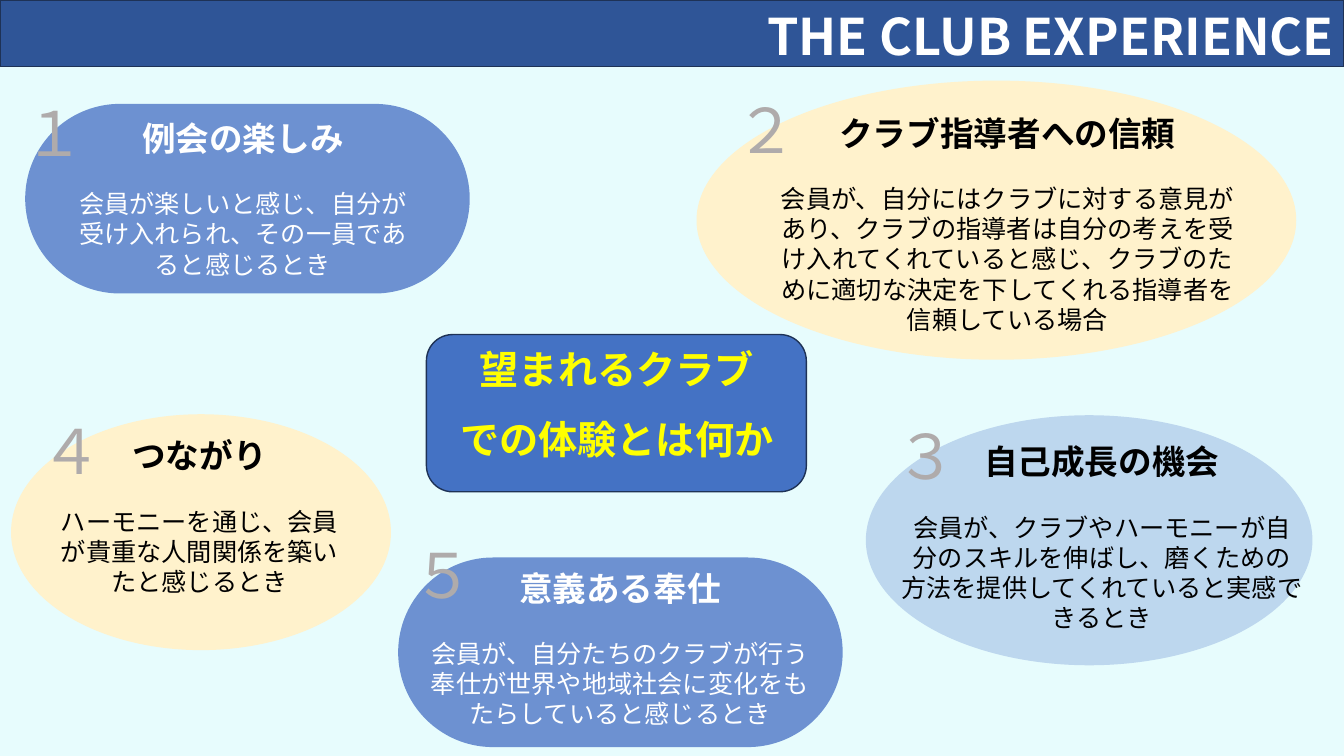
from dataclasses import dataclass

from pptx import Presentation
from pptx.dml.color import RGBColor
from pptx.enum import shapes, text
from pptx.oxml import ns
from pptx.util import Pt

FONT = "Noto Sans CJK JP"
WHITE = RGBColor(0xFF, 0xFF, 0xFF)
BLACK = RGBColor(0x00, 0x00, 0x00)
YELLOW = RGBColor(0xFF, 0xFF, 0x00)
GREY = RGBColor(0xAF, 0xAB, 0xAB)
PALE = RGBColor(0xE7, 0xFC, 0xFD)
NAVY = RGBColor(0x2F, 0x55, 0x97)
EDGE = RGBColor(0x1E, 0x32, 0x56)
BLUE = RGBColor(0x44, 0x72, 0xC4)
SOFT_BLUE = RGBColor(0x6D, 0x91, 0xD1)
LIGHT_BLUE = RGBColor(0xBD, 0xD7, 0xEE)
CREAM = RGBColor(0xFF, 0xF2, 0xCC)

OVAL = shapes.MSO_SHAPE.OVAL
RECTANGLE = shapes.MSO_SHAPE.RECTANGLE
ROUNDED = shapes.MSO_SHAPE.ROUNDED_RECTANGLE
LEFT, CENTER, RIGHT = text.PP_ALIGN.LEFT, text.PP_ALIGN.CENTER, text.PP_ALIGN.RIGHT


@dataclass
class Card:
    """One numbered experience; inset is (left, top, width) and badge (left, top)."""
    number: str
    title: str
    body: str
    kind: int
    fill: RGBColor
    ink: RGBColor
    box: tuple
    inset: tuple
    badge: tuple


CARDS = [
    Card("２", "クラブ指導者への信頼",
         "会員が、自分にはクラブに対する意見があり、クラブの指導者は自分の考えを受け入れてくれていると感じ、"
         "クラブのために適切な決定を下してくれる指導者を信頼している場合",
         OVAL, CREAM, BLACK, (497.5, 57.6, 428.4, 199.4), (46.8, 19.4, 350.6), (20.9, 4.3)),
    Card("１", "例会の楽しみ",
         "会員が楽しいと感じ、自分が受け入れられ、その一員であると感じるとき",
         ROUNDED, SOFT_BLUE, WHITE, (18, 74.2, 317.5, 135.4), (24.5, 6.5, 262), (-8.6, -10)),
    Card("３", "自己成長の機会",
         "会員が、クラブやハーモニーが自分のスキルを伸ばし、磨くための方法を提供してくれていると実感できるとき",
         OVAL, LIGHT_BLUE, BLACK, (618.5, 296.6, 319, 178.6), (18, 15.1, 301), (13.7, -1.4)),
    Card("５", "意義ある奉仕",
         "会員が、自分たちのクラブが行う奉仕が世界や地域社会に変化をもたらしていると感じるとき",
         ROUNDED, SOFT_BLUE, WHITE, (284.4, 398.2, 317.5, 135.4), (13.7, 3.6, 289.4), (2.9, -18)),
    Card("４", "つながり",
         "ハーモニーを通じ、会員が貴重な人間関係を築いたと感じるとき",
         OVAL, CREAM, BLACK, (7.9, 295.9, 271.4, 168.5), (28.1, 11.5, 213.1), (13.7, -4.3)),
]


def add_panel(parent, kind, box, fill, edge=None):
    """Draw a filled shape, outlined only when an edge colour is given."""
    panel = parent.shapes.add_shape(kind, *map(Pt, box))
    panel.shadow.inherit = False
    panel.fill.solid()
    panel.fill.fore_color.rgb = fill
    if edge is None:
        panel.line.fill.background()
    else:
        panel.line.color.rgb = edge
        panel.line.width = Pt(1)
    return panel


def add_text(parent, box, lines, color, align):
    """Write (words, size, bold, line spacing, space before) lines in a text box."""
    frame = parent.shapes.add_textbox(*map(Pt, box)).text_frame
    frame.word_wrap = True
    frame.text = "\n".join(line[0] for line in lines)
    for para, (_, size, bold, spacing, before) in zip(frame.paragraphs, lines):
        para.alignment = align
        para.line_spacing = spacing
        if before:
            para.space_before = Pt(before)
        for span in para.runs:
            span.font.name = FONT
            span.font.size = Pt(size)
            span.font.bold = bold
            span.font.color.rgb = color
            east_asian = span.font._element.makeelement(ns.qn("a:ea"), {"typeface": FONT})
            span.font._element.find(ns.qn("a:latin")).addnext(east_asian)


def add_banner(page, box):
    """Draw the title band with its right-aligned heading."""
    left, top, width, height = box
    add_panel(page, RECTANGLE, box, NAVY, EDGE)
    add_text(page, (left + width / 2, top + 8.6, width / 2, 39.6),
             [("THE CLUB EXPERIENCE", 36, True, 0.8, 0)], WHITE, RIGHT)


def add_question(page, box):
    """Draw the central question."""
    left, top, width, height = box
    group = page.shapes.add_group_shape()
    add_panel(group, ROUNDED, box, BLUE, EDGE)
    add_text(group, (left + 15.8, top + 13, width - 31, 39.6),
             [("望まれるクラブ", 28, True, Pt(25), 0),
              ("での体験とは何か", 28, True, Pt(25), 25)], YELLOW, CENTER)


def add_card(page, card):
    """Draw one numbered card with its title and description."""
    left, top, width, height = card.box
    inset_left, inset_top, inset_width = card.inset
    group = page.shapes.add_group_shape()
    panel = add_panel(group, card.kind, card.box, card.fill)
    if card.kind == ROUNDED:
        panel.adjustments[0] = 0.5
    add_text(group, (left + inset_left, top + inset_top, inset_width, 123.8),
             [(card.title, 24, True, Pt(28.8), 0),
              (card.body, 18, False, Pt(21.6), 21.6)], card.ink, CENTER)
    add_text(group, (left + card.badge[0], top + card.badge[1], 41.8, 60.5),
             [(card.number, 44, False, Pt(52.8), 0)], GREY, LEFT)


def main():
    """Build the slide and save it."""
    deck = Presentation()
    deck.slide_width, deck.slide_height = Pt(960), Pt(540)
    page = deck.slides.add_slide(deck.slide_layouts[6])
    page.background.fill.solid()
    page.background.fill.fore_color.rgb = PALE
    add_banner(page, (0, 0, 960, 47.5))
    add_question(page, (304.6, 239, 271.4, 112.3))
    for card in CARDS:
        add_card(page, card)
    deck.save("out.pptx")


if __name__ == "__main__":
    main()
